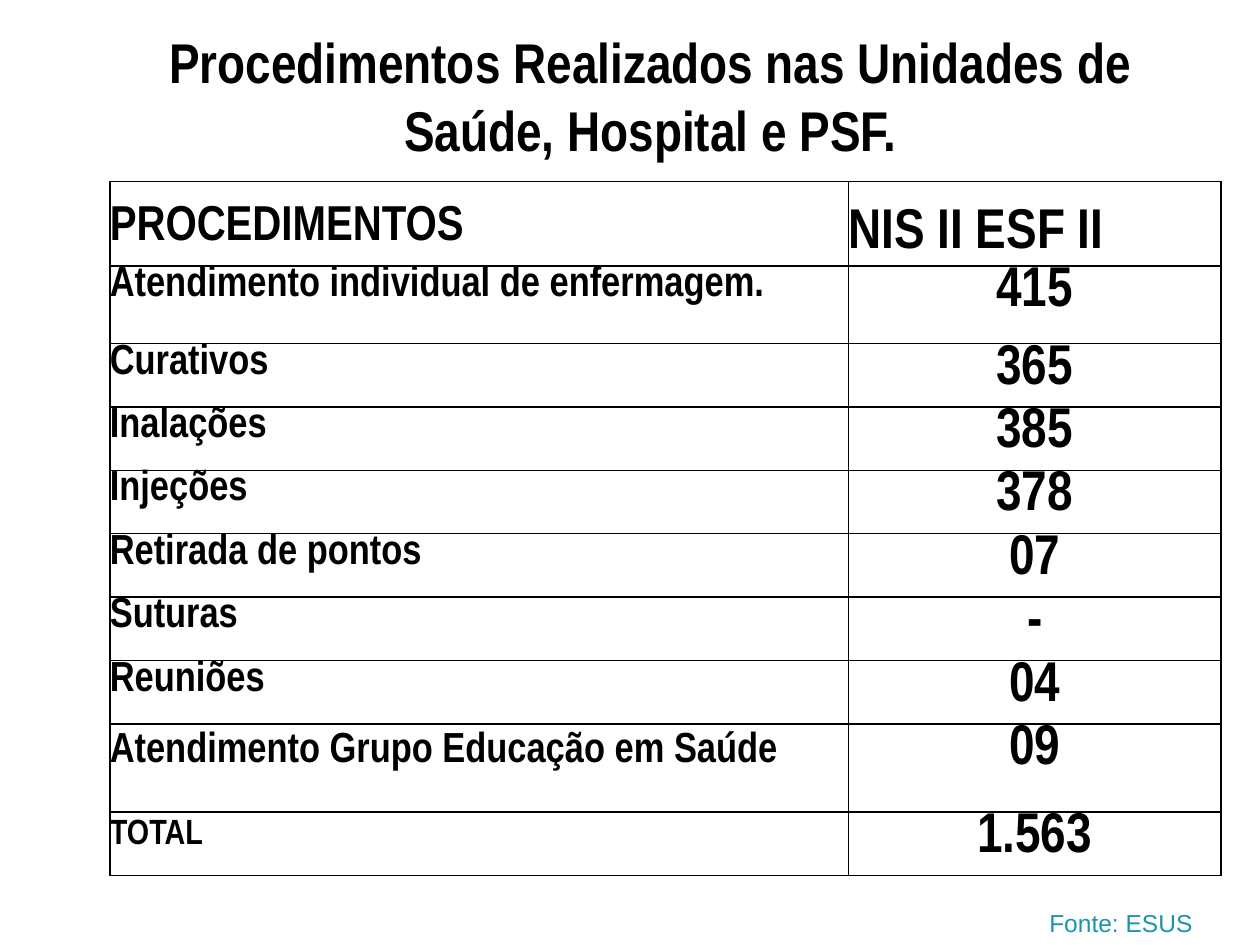
"""Build the slide of procedures carried out in the health units."""
from dataclasses import dataclass

from lxml.etree import SubElement
from pptx import Presentation
from pptx.dml.color import RGBColor
from pptx.enum.text import MSO_ANCHOR, MSO_AUTO_SIZE, PP_ALIGN
from pptx.oxml.ns import qn
from pptx.util import Pt

TITLE = "Procedimentos Realizados nas Unidades de Saúde, Hospital e PSF."
HEADINGS = ("PROCEDIMENTOS", "NIS II ESF II")
PROCEDURES = [
    ("Atendimento individual de enfermagem.", "415"),
    ("Curativos", "365"),
    ("Inalações", "385"),
    ("Injeções", "378"),
    ("Retirada de pontos", "07"),
    ("Suturas", "-"),
    ("Reuniões", "04"),
    ("Atendimento Grupo Educação em Saúde", "09"),
]
TOTAL = ("TOTAL", "1.563")
SOURCE = "Fonte: ESUS"

SLIDE_SIZE = (720, 540)
TITLE_BOX = (65.5, 12.25, 612.75, 84.25)
TABLE_ORIGIN = (62.75, 103.7)
COLUMN_WIDTHS = (422, 213)
ROW_HEIGHT = 36.25
TALL_ROWS = {0: 48.2, 1: 44.4, 8: 50.4}
SOURCE_BOX = (592.5, 517, 106, 22.3)


@dataclass(frozen=True)
class Theme:
    """Fonts, colours and type sizes of the slide."""

    main_font: str = "Arial Narrow"
    source_font: str = "Arial"
    ink: str = "000000"
    accent: str = "1D94AD"
    large: int = 32
    heading: int = 28
    label: int = 24
    total: int = 20
    source: int = 14
    border: int = 1


THEME = Theme()


def write(frame, text, size, align=PP_ALIGN.LEFT, spacing=1.0,
          font=THEME.main_font, color=THEME.ink, bold=True):
    """Fill a text frame with one formatted run."""
    paragraph = frame.paragraphs[0]
    paragraph.alignment = align
    paragraph.line_spacing = spacing
    paragraph.space_before = Pt(0)
    run = paragraph.add_run()
    run.text = text
    run.font.size = Pt(size)
    run.font.name = font
    run.font.bold = bold
    run.font.color.rgb = RGBColor.from_string(color)


def outline(cell):
    """Give a cell its four borders and no fill."""
    properties = cell._tc.get_or_add_tcPr()
    for side in ("L", "R", "T", "B"):
        line = SubElement(properties, qn(f"a:ln{side}"), w=str(Pt(THEME.border)))
        SubElement(SubElement(line, qn("a:solidFill")), qn("a:srgbClr"), val=THEME.ink)
    cell.fill.background()


def add_title(slide):
    """Place the title in the layout's placeholder."""
    title = slide.shapes.title
    title.left, title.top, title.width, title.height = map(Pt, TITLE_BOX)
    title.text_frame.auto_size = MSO_AUTO_SIZE.NONE
    title.text_frame.word_wrap = True
    title.text_frame.vertical_anchor = MSO_ANCHOR.MIDDLE
    write(title.text_frame, TITLE, THEME.large, PP_ALIGN.CENTER)


def add_procedures(slide):
    """Draw the table of procedures and their counts."""
    rows = [(HEADINGS, THEME.heading, 1.5)]
    rows += [(entry, THEME.label, 1.0) for entry in PROCEDURES[:-1]]
    rows += [(PROCEDURES[-1], THEME.label, 1.2), (TOTAL, THEME.total, 1.2)]
    heights = [TALL_ROWS.get(index, ROW_HEIGHT) for index in range(len(rows))]
    table = slide.shapes.add_table(
        len(rows), len(COLUMN_WIDTHS), *map(Pt, TABLE_ORIGIN),
        Pt(sum(COLUMN_WIDTHS)), Pt(sum(heights))).table
    table.first_row = table.horz_banding = False
    for column, width in zip(table.columns, COLUMN_WIDTHS):
        column.width = Pt(width)
    for index, ((label, count), label_size, spacing) in enumerate(rows):
        table.rows[index].height = Pt(heights[index])
        label_cell, count_cell = table.rows[index].cells
        for cell in (label_cell, count_cell):
            cell.margin_left = cell.margin_right = Pt(0)
            cell.margin_top = cell.margin_bottom = Pt(0)
            outline(cell)
        write(label_cell.text_frame, label, label_size, spacing=spacing)
        if index == 0:
            write(count_cell.text_frame, count, THEME.large, spacing=spacing)
        else:
            write(count_cell.text_frame, count, THEME.large, PP_ALIGN.CENTER)


def add_source(slide):
    """Place the source line under the table."""
    frame = slide.shapes.add_textbox(*map(Pt, SOURCE_BOX)).text_frame
    frame.word_wrap = True
    write(frame, SOURCE, THEME.source, spacing=0.9, font=THEME.source_font,
          color=THEME.accent, bold=False)


def main():
    """Build and save the presentation."""
    presentation = Presentation()
    presentation.slide_width, presentation.slide_height = map(Pt, SLIDE_SIZE)
    slide = presentation.slides.add_slide(presentation.slide_layouts[5])
    add_title(slide)
    add_procedures(slide)
    add_source(slide)
    presentation.save("out.pptx")


if __name__ == "__main__":
    main()
